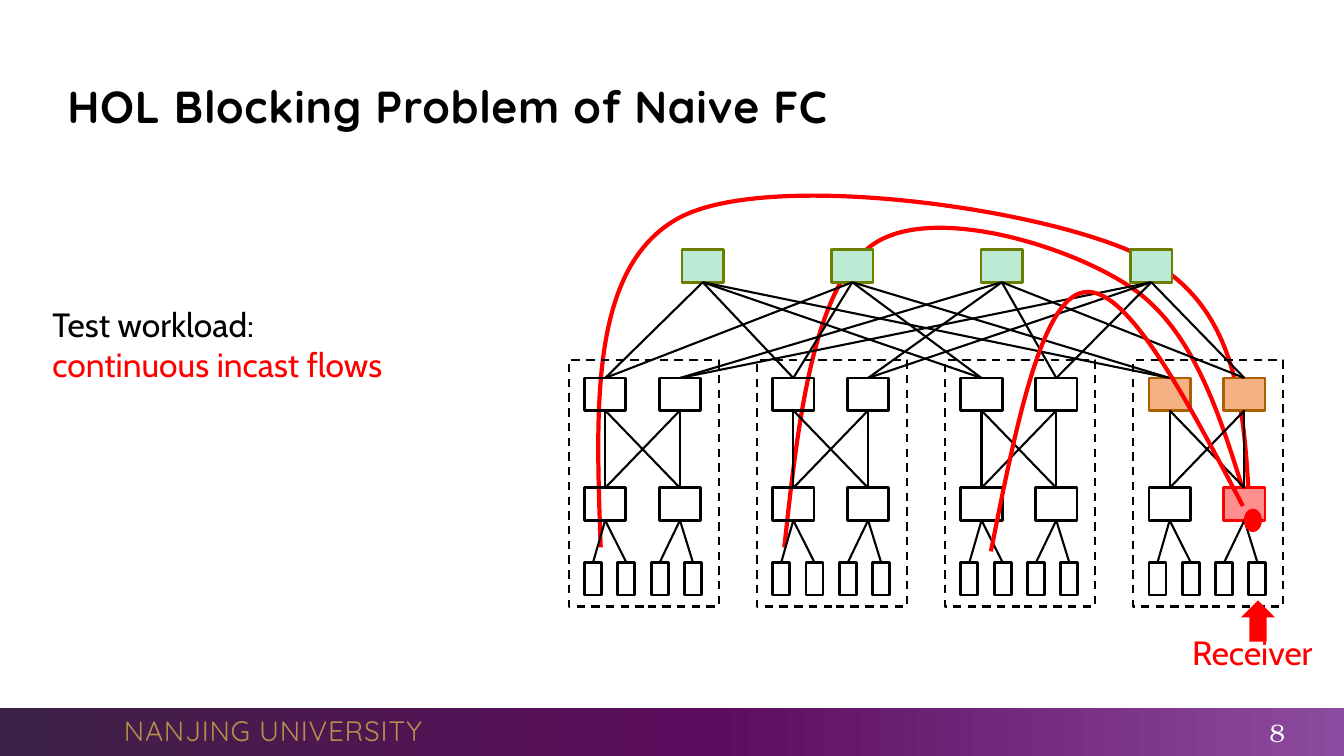
from copy import deepcopy

from lxml.etree import SubElement
from pptx import Presentation
from pptx.dml.color import RGBColor
from pptx.enum.dml import MSO_LINE
from pptx.enum.shapes import MSO_CONNECTOR, MSO_SHAPE
from pptx.enum.text import MSO_ANCHOR, PP_ALIGN
from pptx.oxml.ns import qn
from pptx.util import Pt

# Content
COLORS = {
    "black": "000000", "white": "FFFFFF", "red": "FF0000", "gold": "B88F4C",
    "core": "BBEAD5", "core_line": "6C7E00",
    "hot": "F4B183", "hot_line": "AD5E00", "jammed": "FF8F8F",
    "band_left": "3E2146", "band_mid": "5C0C5C", "band_right": "8C4BA0",
}
TITLE = [("HOL Blocking Problem of Naive FC", "black")]
WORKLOAD = [("Test workload:", "black"), ("continuous incast flows", "red")]
RECEIVER = [("Receiver", "red")]
FOOTER = [("NANJING UNIVERSITY", "gold")]
PAGE = [("8", "white")]
BAND_STOPS = [(0, "band_left"), (0.53, "band_mid"), (1, "band_right")]

# Each flow: its frame (left, top, width, height), then a start point
# followed by two control points and an end per curve
FLOWS = [
    ((427, 139.7, 465.5, 251.3),
     [(429.1, 391), (425.5, 290.2), (421.2, 190.1), (485.3, 155.5),
      (550.1, 121), (748.8, 149), (816.5, 183.6),
      (884.9, 218.2), (888.5, 290.9), (892.5, 362.9)]),
    ((560.2, 162.9, 329.7, 228.1),
     [(560.2, 391), (570.2, 298.8), (581, 206.6), (622.1, 175.7),
      (663.1, 144.7), (763.2, 175), (807.8, 205.2),
      (852.5, 235.4), (871.2, 295.9), (889.9, 356.4)]),
    ((707.8, 208.4, 180, 185.4),
     [(707.8, 393.8), (725.8, 303.8), (743.8, 213.8), (774, 208.8),
      (804.2, 203), (846, 282.2), (887.8, 361.4)]),
]

# Topology measures
PODS, CORES, SWITCHES, HOSTS = 4, 4, 2, 4
POD_LEFT, POD_TOP, POD_PITCH, POD_W, POD_H = 406.3, 257.4, 134.4, 107.2, 175.9
CORE_LEFT, CORE_TOP, CORE_PITCH = 487.2, 178.4, 106.8
SWITCH_W, SWITCH_H, SWITCH_PITCH, POD_INSET = 29.6, 23.2, 53.4, 11.2
AGG_TOP, EDGE_TOP, HOST_TOP = 270, 348.5, 401.8
HOST_W, HOST_PITCH = 12.2, 23.8

prs = Presentation()
prs.slide_width, prs.slide_height = Pt(960), Pt(540)
slide = prs.slides.add_slide(prs.slide_layouts[6])
shapes = slide.shapes


def rgb(name):
    return RGBColor.from_string(COLORS[name])


def add_text(lines, left, top, width, height, font, size, bold=False, spacing=0,
             align=PP_ALIGN.LEFT, anchor=MSO_ANCHOR.TOP, wrap=True):
    frame = shapes.add_textbox(Pt(left), Pt(top), Pt(width), Pt(height)).text_frame
    frame.word_wrap, frame.vertical_anchor = wrap, anchor
    for i, (text, color) in enumerate(lines):
        paragraph = frame.add_paragraph() if i else frame.paragraphs[0]
        paragraph.alignment = align
        run = paragraph.add_run()
        run.text = text
        run.font.name, run.font.size, run.font.bold = font, Pt(size), bold
        run.font.color.rgb = rgb(color)
        if spacing:
            run.font._element.set("spc", str(round(spacing * 100)))


def add_box(left, top, width, height, fill=None, line=None, weight=2, dash=None,
            kind=MSO_SHAPE.RECTANGLE):
    box = shapes.add_shape(kind, Pt(left), Pt(top), Pt(width), Pt(height))
    box.shadow.inherit = False
    if fill:
        box.fill.solid()
        box.fill.fore_color.rgb = rgb(fill)
    else:
        box.fill.background()
    if line:
        box.line.color.rgb = rgb(line)
        box.line.width = Pt(weight)
        if dash:
            box.line.dash_style = dash
    else:
        box.line.fill.background()
    return box


def add_link(upper, lower):
    link = shapes.add_connector(MSO_CONNECTOR.STRAIGHT, 0, 0, 0, 0)
    link.begin_connect(upper, 2)
    link.end_connect(lower, 0)
    link.line.color.rgb = rgb("black")
    link.line.width = Pt(1.5)
    SubElement(link._element.spPr, qn("a:effectLst"))


def add_flow(frame, points):
    left, top, width, height = (Pt(value) for value in frame)
    spots = [(Pt(x) - left, Pt(y) - top) for x, y in points]
    builder = shapes.build_freeform(*spots[0])
    builder.add_line_segments(spots[3::3], close=False)
    flow = builder.convert_to_shape()
    flow.left, flow.top, flow.width, flow.height = left, top, width, height
    # Turn the segments into cubic curves measured from the frame's corner
    outline = flow._element.spPr.find(".//" + qn("a:path"))
    outline.set("w", str(width))
    outline.set("h", str(height))
    for step in list(outline):
        outline.remove(step)
    steps = [("a:moveTo", spots[:1])]
    steps += [("a:cubicBezTo", spots[i:i + 3]) for i in range(1, len(spots), 3)]
    for tag, step_spots in steps:
        step = SubElement(outline, qn(tag))
        for x, y in step_spots:
            SubElement(step, qn("a:pt"), x=str(x), y=str(y))
    flow.shadow.inherit = False
    flow.fill.background()
    flow.line.color.rgb = rgb("red")
    flow.line.width = Pt(3)


def add_switch(left, top, fill=None, line="black"):
    return add_box(left, top, SWITCH_W, SWITCH_H, fill, line)


# Footer band with a three-stop gradient
band = add_box(0, 505.4, 960, 34.6)
band.fill.gradient()
band.fill.gradient_angle = 0
first_stop = band._element.spPr.find(".//" + qn("a:gs"))
first_stop.addnext(deepcopy(first_stop))
for stop, (position, color) in zip(band.fill.gradient_stops, BAND_STOPS):
    stop.position = position
    stop.color.rgb = rgb(color)
add_text(FOOTER, 81.5, 505.8, 228.2, 31.7, "Quicksand", 20, spacing=0.5,
         anchor=MSO_ANCHOR.MIDDLE, wrap=False)
add_text(PAGE, 848.7, 510.5, 76.3, 25.2, "TeX Gyre Bonum", 18,
         align=PP_ALIGN.RIGHT, anchor=MSO_ANCHOR.MIDDLE)

# Title
add_text(TITLE, 41, 47.8, 864, 55.4, "Quicksand", 32, bold=True, spacing=0.5,
         anchor=MSO_ANCHOR.MIDDLE)

# Flows that pass behind the core switches
for flow_parts in FLOWS[:2]:
    add_flow(*flow_parts)

# Core switches
cores = [add_switch(CORE_LEFT + i * CORE_PITCH, CORE_TOP, "core", "core_line")
         for i in range(CORES)]

# Pods: aggregation switches, edge switches, hosts and their links
for pod in range(PODS):
    pod_left = POD_LEFT + pod * POD_PITCH
    inner_left = pod_left + POD_INSET
    last_pod = pod == PODS - 1
    agg_style = ("hot", "hot_line") if last_pod else (None, "black")
    aggs, edges = [], []
    for i in range(SWITCHES):
        switch_left = inner_left + i * SWITCH_PITCH
        jammed = last_pod and i == SWITCHES - 1
        edge_style = ("jammed", "red") if jammed else (None, "black")
        edges.append(add_switch(switch_left, EDGE_TOP, *edge_style))
        aggs.append(add_switch(switch_left, AGG_TOP, *agg_style))
    add_box(pod_left, POD_TOP, POD_W, POD_H, line="black", weight=1.5,
            dash=MSO_LINE.DASH)
    for agg in aggs:
        for edge in edges:
            add_link(agg, edge)
    for i in range(HOSTS):
        host = add_box(inner_left + i * HOST_PITCH, HOST_TOP, HOST_W, SWITCH_H,
                       line="black")
        add_link(edges[i * SWITCHES // HOSTS], host)
    for i, core in enumerate(cores):
        add_link(core, aggs[i * SWITCHES // CORES])

# Congestion point and the flow in front
add_box(888.4, 363.4, 13, 16.6, "red", kind=MSO_SHAPE.OVAL)
add_flow(*FLOWS[2])

# Labels and receiver arrow
add_text(WORKLOAD, 30.4, 213.4, 364.3, 65.5, "Cabin", 24)
add_text(RECEIVER, 844.5, 447.8, 108.7, 36, "Cabin", 24)
add_box(886.4, 428.8, 24.5, 29.5, "red", kind=MSO_SHAPE.UP_ARROW)

prs.save("out.pptx")
